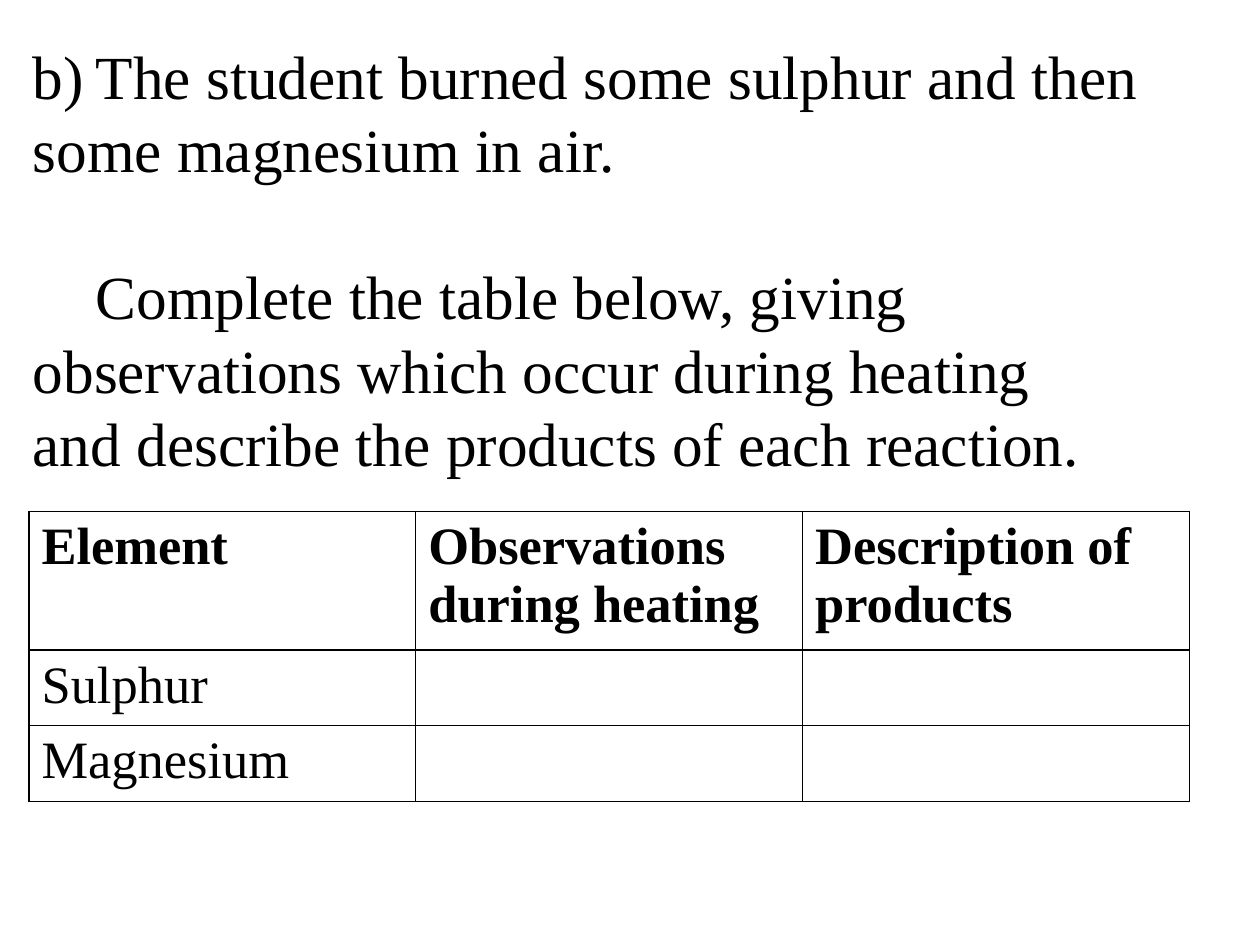
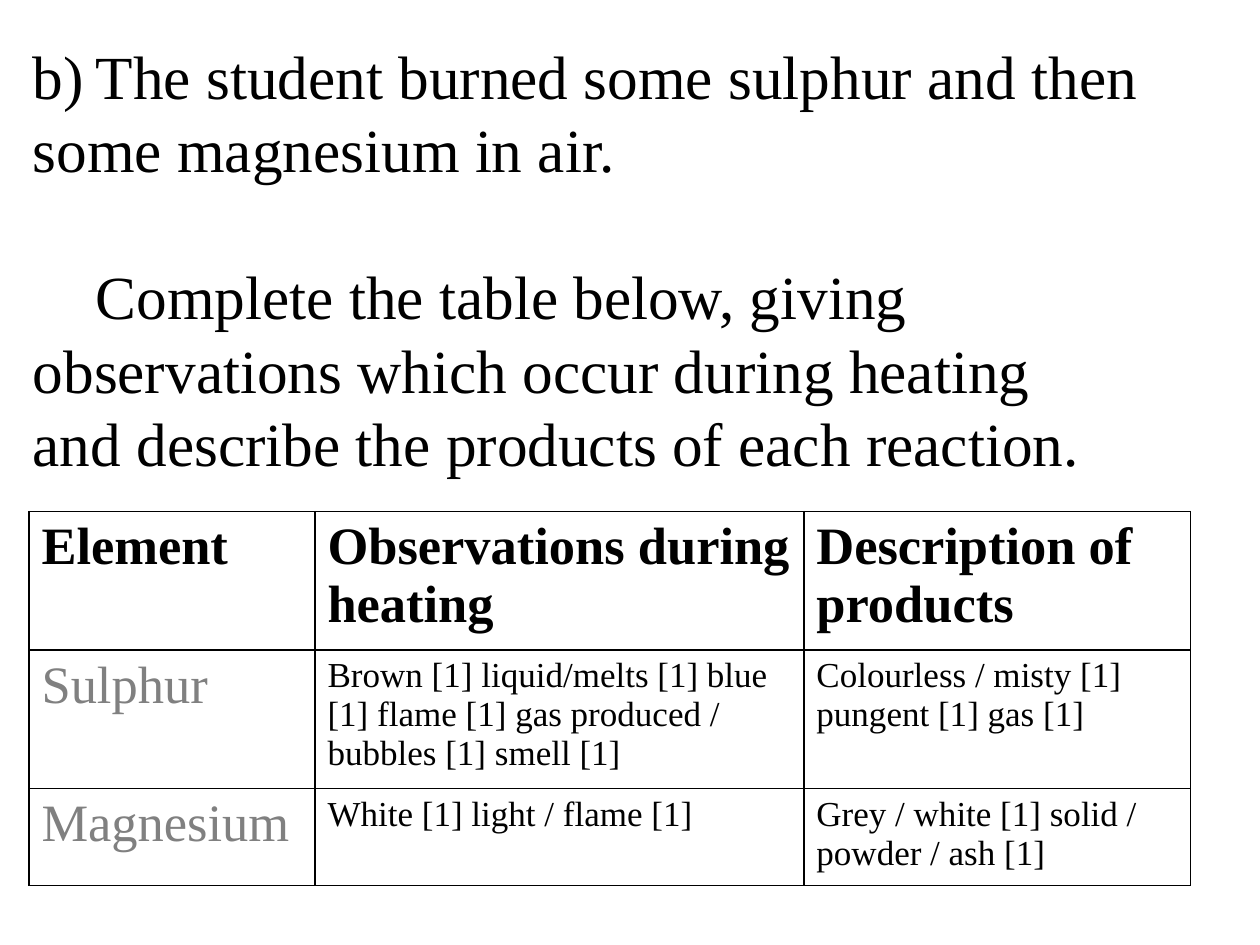
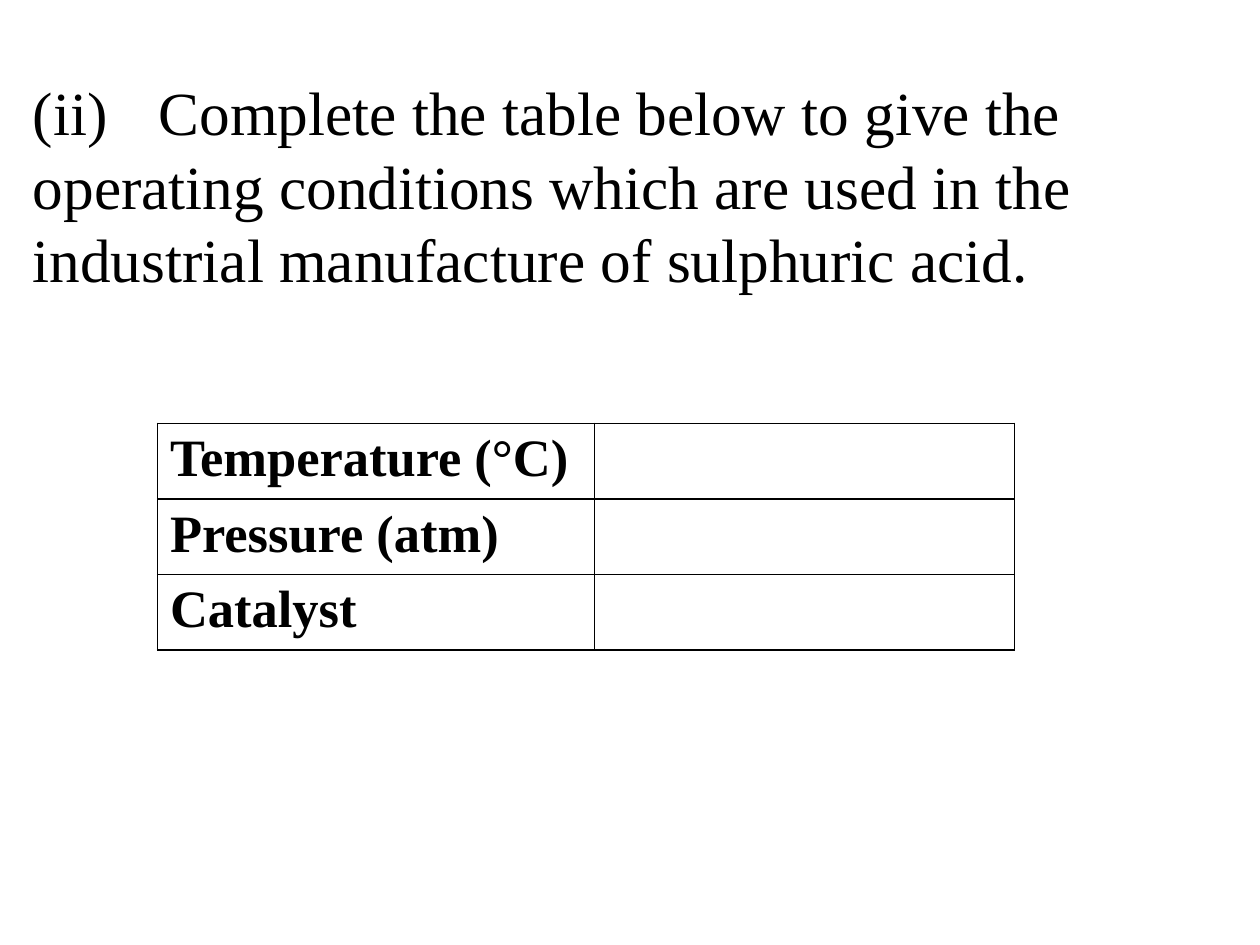
from dataclasses import dataclass

from pptx import Presentation
from pptx.dml.color import RGBColor
from pptx.enum.text import MSO_ANCHOR, MSO_AUTO_SIZE, PP_ALIGN
from pptx.oxml.ns import qn
from pptx.util import Inches, Pt
from lxml.etree import SubElement


@dataclass(frozen=True)
class Theme:
    font: str = "Times New Roman"
    ink: str = "000000"
    given: str = "808080"
    question_size: int = 35
    question_pitch: int = 42
    table_size: int = 30
    answer_size: int = 20
    border: int = 1


THEME = Theme()
TITLE_ONLY = 5
QUESTION_BOX = (0.16, 0.23, 9.61, 7.11)

BURNING_QUESTION = [
    "b)\tThe student burned some sulphur and then some magnesium in air.",
    "\tComplete the table below, giving observations which occur during heating\v"
    "and describe the products of each reaction.",
]
ACID_QUESTION = [
    "(ii)\tComplete the table below to give the operating conditions "
    "which are used in the industrial manufacture of sulphuric acid.",
]
BURNING_HEADINGS = ["Element", "Observations during heating", "Description of products"]
ELEMENTS = ["Sulphur", "Magnesium"]
ANSWERS = [
    ["Brown [1] liquid/melts [1] blue [1] flame [1] gas produced / bubbles [1] smell [1]",
     "Colourless / misty [1] pungent [1] gas [1]"],
    ["White [1] light / flame [1]", "Grey / white [1] solid / powder / ash [1]"],
]
CONDITIONS = ["Temperature (°C)", "Pressure (atm)", "Catalyst"]


def write(paragraph, text, *, size, color=THEME.ink, bold=False, pitch=None, before=0):
    """Fill a paragraph with left-aligned text in the given format."""
    paragraph.text = text
    paragraph.alignment = PP_ALIGN.LEFT
    paragraph.space_before = Pt(before)
    if pitch:
        paragraph.line_spacing = Pt(pitch)
    for run in paragraph.runs:
        run.font.name = THEME.font
        run.font.size = Pt(size)
        run.font.bold = bold
        run.font.color.rgb = RGBColor.from_string(color)


def outline(cell):
    """Draw a solid line on all four sides of a cell, with no fill."""
    properties = cell._tc.get_or_add_tcPr()
    for side in ("a:lnL", "a:lnR", "a:lnT", "a:lnB"):
        line = SubElement(properties, qn(side), w=str(Pt(THEME.border)))
        fill = SubElement(line, qn("a:solidFill"))
        SubElement(fill, qn("a:srgbClr"), val=THEME.ink)
    cell.fill.background()


def add_question(slide, box, paragraphs, top_inset):
    """Place the question in the title placeholder."""
    question = slide.shapes.title
    question.left, question.top, question.width, question.height = map(Inches, box)
    frame = question.text_frame
    frame.word_wrap = True
    frame.auto_size = MSO_AUTO_SIZE.NONE
    frame.vertical_anchor = MSO_ANCHOR.TOP
    frame.margin_top = Inches(top_inset)
    for index, text in enumerate(paragraphs):
        paragraph = frame.add_paragraph() if index else frame.paragraphs[0]
        write(paragraph, text, size=THEME.question_size, pitch=THEME.question_pitch,
              before=THEME.question_pitch if index else 0)


def add_grid(slide, origin, widths, heights, rows, style_of):
    """Place a ruled table; style_of(row, column) gives each cell's format."""
    left, top = origin
    grid = slide.shapes.add_table(
        len(heights), len(widths), Inches(left), Inches(top),
        Inches(sum(widths)), Inches(sum(heights))).table
    grid.first_row = grid.horz_banding = False
    for column, width in zip(grid.columns, widths):
        column.width = Inches(width)
    for r, (row, height) in enumerate(zip(rows, heights)):
        grid.rows[r].height = Inches(height)
        for c, text in enumerate(row):
            cell = grid.cell(r, c)
            outline(cell)
            if text:
                write(cell.text_frame.paragraphs[0], text, **style_of(r, c))


def add_burning_slide(deck, widths, heights, answers, element_color):
    """Question b), with its table either blank or answered."""
    def style_of(row, column):
        if row == 0:
            return {"size": THEME.table_size, "bold": True}
        if column == 0:
            return {"size": THEME.table_size, "color": element_color}
        return {"size": THEME.answer_size}

    slide = deck.slides.add_slide(deck.slide_layouts[TITLE_ONLY])
    add_question(slide, QUESTION_BOX, BURNING_QUESTION, top_inset=0.07)
    rows = [BURNING_HEADINGS] + [[name, *cells] for name, cells in zip(ELEMENTS, answers)]
    add_grid(slide, (0.23, 4.06), widths, heights, rows, style_of)


def add_acid_slide(deck):
    """Question (ii), with a blank table of operating conditions."""
    slide = deck.slides.add_slide(deck.slide_layouts[TITLE_ONLY])
    add_question(slide, QUESTION_BOX, ACID_QUESTION, top_inset=0.36)
    add_grid(slide, (1.25, 3.36), [3.47, 3.33], [0.6] * len(CONDITIONS),
             [[condition, ""] for condition in CONDITIONS],
             lambda row, column: {"size": THEME.table_size, "bold": True})


def main():
    deck = Presentation()
    deck.slide_width, deck.slide_height = Inches(10), Inches(7.5)
    add_burning_slide(deck, [3.07] * 3, [1.1, 0.6, 0.6],
                      [["", ""]] * len(ELEMENTS), THEME.ink)
    add_burning_slide(deck, [2.27, 3.88, 3.07], [1.1, 1.1, 0.77], ANSWERS, THEME.given)
    add_acid_slide(deck)
    deck.save("out.pptx")


if __name__ == "__main__":
    main()
